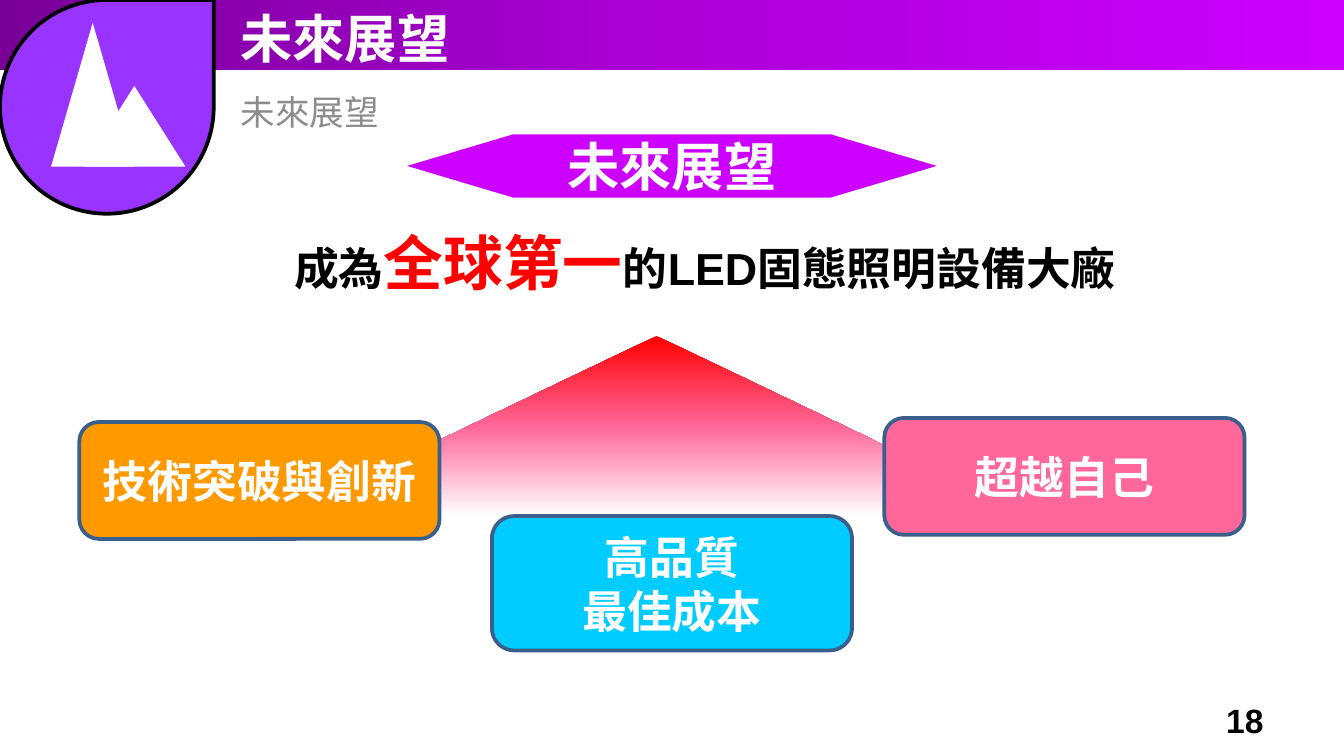
from copy import deepcopy

from pptx import Presentation
from pptx.dml.color import RGBColor
from pptx.enum.shapes import MSO_SHAPE as SHAPE
from pptx.enum.text import MSO_ANCHOR as ANCHOR, MSO_AUTO_SIZE as AUTO, PP_ALIGN as ALIGN
from pptx.oxml.ns import qn
from pptx.util import Inches, Pt

WHITE = RGBColor(0xFF, 0xFF, 0xFF)
BLACK = RGBColor(0, 0, 0)
GRAY = RGBColor(0x8C, 0x8C, 0x8C)
RED = RGBColor(0xFF, 0, 0)
PINK = RGBColor(0xFF, 0x66, 0x99)
ORANGE = RGBColor(0xFF, 0x99, 0)
CYAN = RGBColor(0, 0xCC, 0xFF)
NAVY = RGBColor(0x3A, 0x5F, 0x8C)
VIOLET = RGBColor(0x99, 0x33, 0xFF)
MAGENTA = RGBColor(0xCC, 0, 0xFF)
PURPLE = RGBColor(0xAC, 0, 0xD7)
DEEP_PURPLE = RGBColor(0x79, 0, 0x97)


def set_text(s, *lines, size=24, color=WHITE, bold=True, align=ALIGN.CENTER, anchor=ANCHOR.MIDDLE):
    tf = s.text_frame
    tf.word_wrap = True
    tf.auto_size = AUTO.NONE
    tf.vertical_anchor = anchor
    for i, line in enumerate(lines):
        p = tf.add_paragraph() if i else tf.paragraphs[0]
        p.alignment = align
        runs = [(line, size, color)] if isinstance(line, str) else line
        for text, run_size, run_color in runs:
            r = p.add_run()
            r.text = text
            r.font.name = "Arial"
            r.font.size = Pt(run_size)
            r.font.bold = bold
            r.font.color.rgb = run_color


def place(s, x, y, w, h):
    s.left, s.top, s.width, s.height = Inches(x), Inches(y), Inches(w), Inches(h)


def add_shape(shapes, kind, x, y, w, h, fill=None, line=None):
    s = shapes.add_shape(kind, Inches(x), Inches(y), Inches(w), Inches(h))
    s.shadow.inherit = False
    if fill is not None:
        s.fill.solid()
        s.fill.fore_color.rgb = fill
    if line is None:
        s.line.fill.background()
    else:
        s.line.color.rgb = line
        s.line.width = Pt(2)
    return s


def set_gradient(s, colors, angle):
    s.fill.gradient()
    s.fill.gradient_angle = angle
    stops = s._element.spPr.find(".//" + qn("a:gsLst"))
    stops.insert(1, deepcopy(stops[0]))
    for i, (stop, color) in enumerate(zip(s.fill.gradient_stops, colors)):
        stop.position = i / 2
        stop.color.rgb = color


def add_text(shapes, x, y, w, h, *lines, **fmt):
    s = shapes.add_textbox(Inches(x), Inches(y), Inches(w), Inches(h))
    set_text(s, *lines, **fmt)


def fill_placeholder(slide, s, box, text, **fmt):
    slide.shapes._spTree.append(s._element)
    place(s, *box)
    set_text(s, text, align=ALIGN.LEFT, anchor=ANCHOR.TOP, **fmt)


def add_emblem(shapes):
    group = shapes.add_group_shape().shapes
    add_shape(group, SHAPE.TEAR, 0, 0, 1.59, 1.59, VIOLET, BLACK)
    add_shape(group, SHAPE.ISOSCELES_TRIANGLE, 0.38, 0.17, 0.62, 1.07, WHITE)
    add_shape(group, SHAPE.ISOSCELES_TRIANGLE, 0.62, 0.64, 0.76, 0.6, WHITE)


def add_header(slide):
    title, body = slide.shapes.title, slide.placeholders[1]
    bar = add_shape(slide.shapes, SHAPE.RECTANGLE, 0, 0, 10, 0.52)
    set_gradient(bar, (DEEP_PURPLE, PURPLE, MAGENTA), 0)
    add_emblem(slide.shapes)
    fill_placeholder(slide, title, (1.69, 0, 2.05, 0.57), "未來展望", size=28)
    fill_placeholder(slide, body, (1.69, 0.63, 5.04, 0.37), "未來展望",
                     size=18.5, color=GRAY, bold=False)
    pPr = body.text_frame.paragraphs[0]._p.get_or_add_pPr()
    pPr.set("marL", "0")
    pPr.set("indent", "0")
    pPr.append(pPr.makeelement(qn("a:buNone"), {}))


def add_pillar(shapes, x, y, h, fill, *lines):
    s = add_shape(shapes, SHAPE.ROUNDED_RECTANGLE, x, y, 2.68, h, fill, NAVY)
    set_text(s, *lines)


def main():
    prs = Presentation()
    prs.slide_width = Inches(10)
    prs.slide_height = prs.slide_width * 9 // 16
    slide = prs.slides.add_slide(prs.slide_layouts[1])
    shapes = slide.shapes
    add_header(slide)

    peak = add_shape(shapes, SHAPE.FLOWCHART_EXTRACT, 2.09, 2.5, 5.59, 1.34)
    set_gradient(peak, (RED, PINK, WHITE), 270)
    add_pillar(shapes, 0.59, 3.14, 0.87, ORANGE, "技術突破與創新")
    add_pillar(shapes, 3.66, 3.84, 1, CYAN, "高品質", "最佳成本")
    add_pillar(shapes, 6.58, 3.11, 0.87, PINK, "超越自己")

    vision = [("成為", 24, BLACK), ("全球第一", 32, RED), ("的LED固態照明設備大廠", 24, BLACK)]
    add_text(shapes, 2.09, 1.63, 6.61, 0.64, vision, align=ALIGN.LEFT, anchor=ANCHOR.TOP)
    banner = add_shape(shapes, SHAPE.FLOWCHART_PREPARATION, 3.03, 1, 3.94, 0.47, MAGENTA)
    set_text(banner, "未來展望", size=28)
    add_text(shapes, 7.17, 5.21, 2.33, 0.3, "18", size=18, color=BLACK, align=ALIGN.RIGHT)
    prs.save("out.pptx")


if __name__ == "__main__":
    main()
